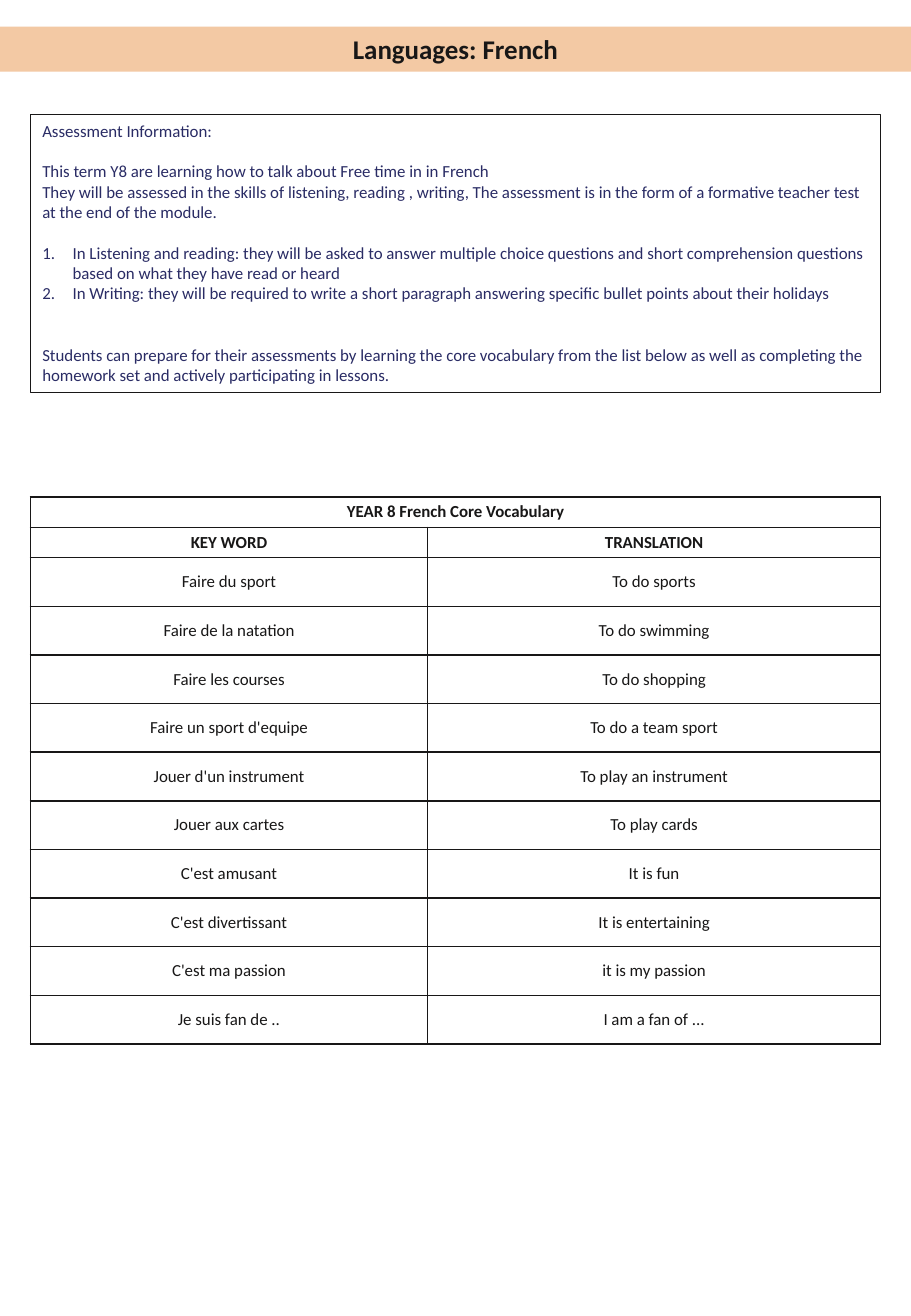
import dataclasses

import lxml.etree
import pptx
import pptx.dml.color
import pptx.enum.shapes
import pptx.enum.text
import pptx.oxml.ns
import pptx.util

SCALE = 9144  # EMU per px, at 100 px to the inch
FONT = "Calibri"
INK = pptx.dml.color.RGBColor(0x18, 0x17, 0x17)
NAVY = pptx.dml.color.RGBColor(0x2A, 0x2C, 0x65)
PEACH = pptx.dml.color.RGBColor(0xF3, 0xC9, 0xA4)
CENTER = pptx.enum.text.PP_ALIGN.CENTER
LEFT = pptx.enum.text.PP_ALIGN.LEFT
LINE = 12.2  # height in points of one line of 10 pt text


@dataclasses.dataclass
class Para:
    text: str
    gap: int = 0  # lines left free above
    listed: bool = False


@dataclasses.dataclass
class Box:
    left: int
    top: int
    width: int
    height: int


NOTES = [
    Para("Assessment Information:"),
    Para("This term Y8 are learning how to talk about Free time in in French", gap=1),
    Para("They will be assessed in the skills of listening, reading , writing, "
         "The assessment is in the form of a formative teacher test at the end of the module."),
    Para("In Listening and reading: they will be asked to answer multiple choice questions "
         "and short comprehension questions based on what they have read or heard",
         gap=1, listed=True),
    Para("In Writing: they will be required to write a short paragraph answering "
         "specific bullet points about their holidays", listed=True),
    Para("Students can prepare for their assessments by learning the core vocabulary from "
         "the list below as well as completing the homework set and actively participating "
         "in lessons.", gap=2),
]
HEADS = 2
WORDS = [
    ("YEAR 8 French Core Vocabulary", ""),
    ("KEY WORD", "TRANSLATION"),
    ("Faire du sport", "To do sports"),
    ("Faire de la natation", "To do swimming"),
    ("Faire les courses", "To do shopping"),
    ("Faire un sport d'equipe", "To do a team sport"),
    ("Jouer d'un instrument", "To play an instrument"),
    ("Jouer aux cartes", "To play cards"),
    ("C'est amusant", "It is fun"),
    ("C'est divertissant", "It is entertaining"),
    ("C'est ma passion", "it is my passion"),
    ("Je suis fan de ..", "I am a fan of ..."),
]
COLS = (327, 373)


def px(count: int) -> pptx.util.Emu:
    return pptx.util.Emu(count * SCALE)


def place(box: Box) -> tuple:
    return px(box.left), px(box.top), px(box.width), px(box.height)


def write(para, text: str, color, size: int = 10, bold: bool = False, align=CENTER) -> None:
    para.alignment = align
    run = para.add_run()
    run.text = text
    run.font.name = FONT
    run.font.size = pptx.util.Pt(size)
    run.font.bold = bold
    run.font.color.rgb = color


def number(para) -> None:
    """Make the paragraph an item of a numbered list."""
    props = para._p.get_or_add_pPr()
    props.set("marL", str(px(25)))
    props.set("indent", str(-px(25)))
    lxml.etree.SubElement(props, pptx.oxml.ns.qn("a:buAutoNum"), type="arabicPeriod")


def add_box(slide, box: Box):
    shape = slide.shapes.add_shape(pptx.enum.shapes.MSO_SHAPE.RECTANGLE, *place(box))
    shape.shadow.inherit = False
    shape.fill.background()
    shape.line.fill.background()
    shape.text_frame.word_wrap = True
    shape.text_frame.vertical_anchor = pptx.enum.text.MSO_ANCHOR.TOP
    return shape


def add_notes(slide, box: Box) -> None:
    shape = add_box(slide, box)
    shape.line.color.rgb = INK
    shape.line.width = pptx.util.Pt(0.75)
    frame = shape.text_frame
    for index, note in enumerate(NOTES):
        para = frame.add_paragraph() if index else frame.paragraphs[0]
        if note.listed:
            number(para)
        if note.gap:
            para.space_before = pptx.util.Pt(note.gap * LINE)
        write(para, note.text, NAVY, align=LEFT)


def add_title(slide, box: Box) -> None:
    shape = add_box(slide, box)
    shape.fill.solid()
    shape.fill.fore_color.rgb = PEACH
    write(shape.text_frame.paragraphs[0], "Languages: French", INK, size=16, bold=True)


def edge(cell) -> None:
    """Draw a thin line on all four sides of the cell."""
    props = cell._tc.get_or_add_tcPr()
    for index, side in enumerate("LRTB"):
        line = lxml.etree.Element(pptx.oxml.ns.qn(f"a:ln{side}"), w=str(pptx.util.Pt(1)))
        fill = lxml.etree.SubElement(line, pptx.oxml.ns.qn("a:solidFill"))
        lxml.etree.SubElement(fill, pptx.oxml.ns.qn("a:srgbClr"), val=str(INK))
        props.insert(index, line)


def add_words(slide, box: Box) -> None:
    table = slide.shapes.add_table(len(WORDS), len(COLS), *place(box)).table
    table.first_row = table.horz_banding = False
    for col, width in zip(table.columns, COLS):
        col.width = px(width)
    for row, (line, pair) in enumerate(zip(table.rows, WORDS)):
        line.height = px(25 if row < HEADS else 40)
        for cell, text in zip(line.cells, pair):
            cell.fill.background()
            edge(cell)
            cell.vertical_anchor = pptx.enum.text.MSO_ANCHOR.MIDDLE
            cell.margin_left = cell.margin_right = px(8)
            cell.margin_top = cell.margin_bottom = px(4)
            if text:
                write(cell.text_frame.paragraphs[0], text, INK, bold=row < HEADS)
    table.cell(0, 0).merge(table.cell(0, 1))


def main() -> None:
    deck = pptx.Presentation()
    deck.slide_width, deck.slide_height = px(750), px(1083)
    slide = deck.slides.add_slide(deck.slide_layouts[6])
    add_words(slide, Box(25, 409, 700, 450))
    add_notes(slide, Box(25, 94, 700, 229))
    add_title(slide, Box(0, 22, 750, 37))
    deck.save("out.pptx")


if __name__ == "__main__":
    main()
